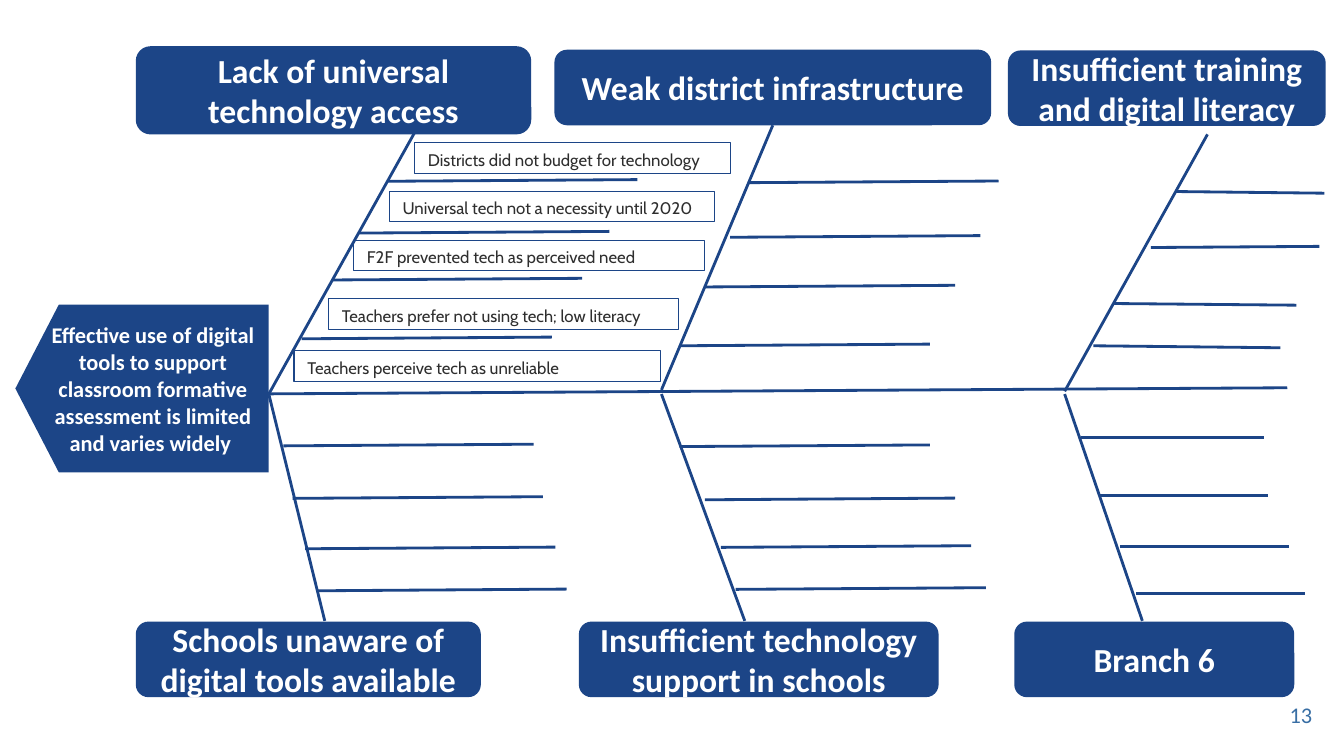
from lxml import etree
from pptx import Presentation
from pptx.dml.color import RGBColor
from pptx.enum.shapes import MSO_CONNECTOR, MSO_SHAPE
from pptx.enum.text import MSO_ANCHOR, PP_ALIGN
from pptx.oxml.ns import qn
from pptx.util import Pt

STRAIGHT = MSO_CONNECTOR.STRAIGHT
ROUNDED = MSO_SHAPE.ROUNDED_RECTANGLE
PENTAGON = MSO_SHAPE.PENTAGON
RECTANGLE = MSO_SHAPE.RECTANGLE
TOP, MIDDLE = MSO_ANCHOR.TOP, MSO_ANCHOR.MIDDLE
LEFT, CENTER, RIGHT = PP_ALIGN.LEFT, PP_ALIGN.CENTER, PP_ALIGN.RIGHT


def color(value):
    return RGBColor.from_string(value)


class Fishbone:
    navy = "1C4587"
    white = "FFFFFF"
    ink = "2E2E2E"
    number = "386EA4"
    heading_font = "Calibri"
    note_font = "Cabin"

    def __init__(self, slide):
        self.shapes = slide.shapes

    def text(self, s, text, size, font, hue, bold=False, align=CENTER, anchor=MIDDLE):
        tf = s.text_frame
        tf.word_wrap = True
        tf.vertical_anchor = anchor
        tf.margin_left = tf.margin_right = Pt(9.6)
        tf.margin_top = tf.margin_bottom = Pt(4.8)
        p = tf.paragraphs[0]
        p.text = text
        p.alignment = align
        p.font.size = Pt(size)
        p.font.name = font
        p.font.bold = bold
        p.font.color.rgb = color(hue)

    def block(self, kind, x, y, w, h, text, size, adjustment):
        s = self.shapes.add_shape(kind, Pt(x), Pt(y), Pt(w), Pt(h))
        s.shadow.inherit = False
        s.adjustments[0] = adjustment
        s.fill.solid()
        s.fill.fore_color.rgb = color(self.navy)
        s.line.fill.background()
        self.text(s, text, size, self.heading_font, self.white, bold=True)
        return s

    def branch(self, x, y, w, h, text):
        self.block(ROUNDED, x, y, w, h, text, 24, 0.167)

    def head(self, x, y, w, h, text):
        s = self.block(PENTAGON, x, y, w, h, text, 16, 0.259)
        s.element.spPr.find(qn("a:xfrm")).set("flipH", "1")

    def note(self, x, y, w, text):
        s = self.shapes.add_shape(RECTANGLE, Pt(x), Pt(y), Pt(w), Pt(21.8))
        s.shadow.inherit = False
        s.fill.background()
        s.line.color.rgb = color(self.navy)
        s.line.width = Pt(0.75)
        self.text(s, text, 12, self.note_font, self.ink, align=LEFT, anchor=TOP)

    def line(self, x1, y1, x2, y2):
        s = self.shapes.add_connector(STRAIGHT, Pt(x1), Pt(y1), Pt(x2), Pt(y2))
        s.line.color.rgb = color(self.navy)
        s.line.width = Pt(2)
        etree.SubElement(s.element.spPr, qn("a:effectLst"))

    def twig(self, x, y, length=178.75, drop=-1.2):
        self.line(x, y, x + length, y + drop)

    def page_number(self, x, y, w, h, text):
        s = self.shapes.add_textbox(Pt(x), Pt(y), Pt(w), Pt(h))
        self.text(s, text, 16, self.heading_font, self.number, align=RIGHT)


BRANCHES = [
    (97, 33, 282.5, 63, "Lack of universal technology access"),
    (396, 35.5, 312, 54, "Weak district infrastructure"),
    (720, 36, 227, 54, "Insufficient training and digital literacy"),
    (97, 444, 246.5, 54, "Schools unaware of digital tools available"),
    (413.5, 444, 257, 54, "Insufficient technology support in schools"),
    (724.5, 444, 200, 54, "Branch 6"),
]

BONES = [
    (919.5, 277, 168, 281.5),
    (296, 95, 192, 281.5),
    (552, 89.5, 472.5, 278.5),
    (862.5, 96, 760.5, 279.5),
    (192, 281.5, 232, 443.5),
    (472.5, 281.5, 532, 443.5),
    (760.5, 281.5, 816, 443.5),
]

LONG_TWIGS = [
    (276.5, 129.5), (256.5, 166.5), (237, 200), (215.5, 242),
    (534.5, 130.5), (521.5, 169.5), (503.5, 205), (485.5, 247),
    (202.5, 318.5), (209, 356), (218, 392), (226, 422),
    (485.5, 319), (503.5, 357), (515, 391), (525.5, 421),
]

SHORT_TWIGS = [
    (839.5, 136.8, 106.5, 1.2), (822, 176.8, 120.5, -0.8),
    (795, 216.8, 131, 1.2), (781, 247, 133.5, 1.4),
    (772, 312.3, 131, 0), (785, 354, 121, 0),
    (800, 390.3, 120.5, 0), (811.5, 424, 120.5, 0),
]

NOTES = [
    (296, 102, 225.5, "Districts did not budget for technology"),
    (278, 136.6, 232.5, "Universal tech not a necessity until 2020"),
    (252.5, 171.5, 250.5, "F2F prevented tech as perceived need"),
    (234.5, 213.5, 250.5, "Teachers prefer not using tech; low literacy"),
    (210, 250.5, 262, "Teachers perceive tech as unreliable"),
]


def main():
    prs = Presentation()
    prs.slide_width, prs.slide_height = Pt(960), Pt(540)
    diagram = Fishbone(prs.slides.add_slide(prs.slide_layouts[6]))
    diagram.page_number(889, 490, 58, 41, "13")
    for branch in BRANCHES:
        diagram.branch(*branch)
    for bone in BONES:
        diagram.line(*bone)
    for twig in LONG_TWIGS + SHORT_TWIGS:
        diagram.twig(*twig)
    diagram.head(11, 217.5, 181, 120,
                 "Effective use of digital tools to support classroom "
                 "formative assessment is limited and varies widely ")
    for note in NOTES:
        diagram.note(*note)
    prs.save("out.pptx")


if __name__ == "__main__":
    main()
